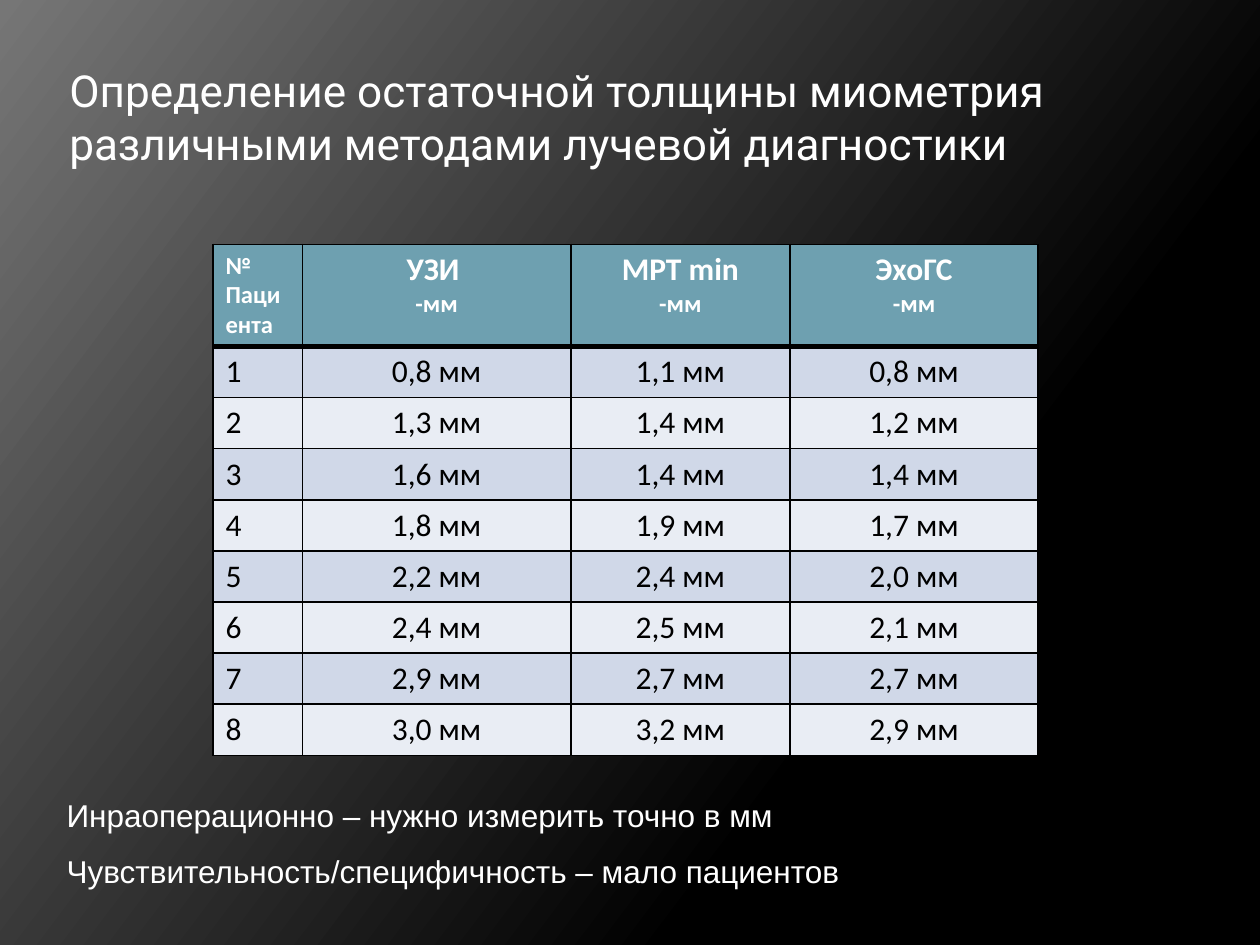
from copy import deepcopy
from dataclasses import dataclass

from lxml.etree import SubElement
from pptx import Presentation
from pptx.dml.color import RGBColor
from pptx.enum.text import MSO_ANCHOR, MSO_AUTO_SIZE, PP_ALIGN
from pptx.oxml.ns import qn
from pptx.util import Inches, Pt


@dataclass(frozen=True)
class Theme:
    white: str = "FFFFFF"
    black: str = "000000"
    glow: str = "767676"
    header: str = "6EA0B0"
    bands: tuple = ("D0D8E8", "E9EDF4")
    title_font: str = "Roboto"
    table_font: str = "Calibri"
    note_font: str = "Arial"
    title_size: float = 25.2
    body_size: float = 18
    unit_size: float = 14


THEME = Theme()

TITLE = "Определение остаточной толщины миометрия различными методами лучевой диагностики"
METHODS = ["УЗИ ", "МРТ min", "ЭхоГС"]
THICKNESS = [
    ("0,8", "1,1", "0,8"),
    ("1,3", "1,4", "1,2"),
    ("1,6", "1,4", "1,4"),
    ("1,8", "1,9", "1,7"),
    ("2,2", "2,4", "2,0"),
    ("2,4", "2,5", "2,1"),
    ("2,9", "2,7", "2,7"),
    ("3,0", "3,2", "2,9"),
]
NOTES = [
    "Инраоперационно – нужно измерить точно в мм",
    "Чувствительность/специфичность – мало пациентов",
]


def write(frame, lines, font, color, size=THEME.body_size, bold=False,
          align=PP_ALIGN.LEFT, before=0):
    """Fill a text frame; a line is a text or a (text, size) pair."""
    for index, line in enumerate(lines):
        text, line_size = line if isinstance(line, tuple) else (line, size)
        paragraph = frame.add_paragraph() if index else frame.paragraphs[0]
        paragraph.alignment = align
        paragraph.space_before = Pt(before)
        run = paragraph.add_run()
        run.text = text
        run.font.name = font
        run.font.size = Pt(line_size)
        run.font.bold = bold
        run.font.color.rgb = RGBColor.from_string(color)


def place(shape, box):
    shape.left, shape.top, shape.width, shape.height = box


def paint_background(slide):
    fill = slide.background.fill
    fill.gradient()
    fill.gradient_angle = 360 - 217
    first, last = fill.gradient_stops
    first.color.rgb = RGBColor.from_string(THEME.black)
    last.color.rgb = RGBColor.from_string(THEME.glow)
    first.position, last.position = 0, 1
    # Keep the gradient black up to 30 %
    stops = slide.element.find(".//" + qn("a:gsLst"))
    black_end = deepcopy(stops[0])
    black_end.set("pos", "30000")
    stops.insert(1, black_end)


def add_title(slide, box):
    title = slide.shapes.title
    place(title, box)
    frame = title.text_frame
    frame.word_wrap = True
    frame.auto_size = MSO_AUTO_SIZE.NONE
    frame.vertical_anchor = MSO_ANCHOR.MIDDLE
    frame.margin_left = frame.margin_right = Inches(0.05)
    frame.margin_top = frame.margin_bottom = Inches(0.05)
    write(frame, [TITLE], THEME.title_font, THEME.white, size=THEME.title_size)


def style_cell(cell, color, top=1, bottom=1):
    """Set black borders, then the fill that must follow them in the XML."""
    properties = cell._tc.get_or_add_tcPr()
    for side, width in (("L", 1), ("R", 1), ("T", top), ("B", bottom)):
        line = SubElement(properties, qn(f"a:ln{side}"), w=str(Pt(width)))
        solid = SubElement(line, qn("a:solidFill"))
        SubElement(solid, qn("a:srgbClr"), val=THEME.black)
    cell.fill.solid()
    cell.fill.fore_color.rgb = RGBColor.from_string(color)


def add_thickness_table(slide, box):
    widths = [0.71, 2.13, 1.74, 1.97]
    table = slide.shapes.add_table(len(THICKNESS) + 1, len(widths), *box).table
    for column, width in zip(table.columns, widths):
        column.width = Inches(width)
    # The header is twice as tall as a patient row
    row_height = int(box[3] / (len(THICKNESS) + 2))
    for index, row in enumerate(table.rows):
        row.height = row_height if index else 2 * row_height

    # Header
    headings = [[("№ Пациента", THEME.unit_size)]]
    headings += [[method, ("-мм", THEME.unit_size)] for method in METHODS]
    for column, heading in enumerate(headings):
        cell = table.cell(0, column)
        style_cell(cell, THEME.header, bottom=3)
        write(cell.text_frame, heading, THEME.table_font, THEME.white, bold=True,
              align=PP_ALIGN.CENTER if column else PP_ALIGN.LEFT)

    # Patients
    for patient, values in enumerate(THICKNESS, start=1):
        texts = [str(patient)] + [f"{value} мм" for value in values]
        for column, text in enumerate(texts):
            cell = table.cell(patient, column)
            style_cell(cell, THEME.bands[(patient - 1) % 2], top=3 if patient == 1 else 1)
            write(cell.text_frame, [text], THEME.table_font, THEME.black,
                  align=PP_ALIGN.CENTER if column else PP_ALIGN.LEFT)


def add_notes_text(slide, box):
    frame = slide.shapes.add_textbox(*box).text_frame
    frame.word_wrap = True
    frame.auto_size = MSO_AUTO_SIZE.SHAPE_TO_FIT_TEXT
    write(frame, NOTES, THEME.note_font, THEME.white, before=10)


def main():
    deck = Presentation()
    deck.slide_width, deck.slide_height = Inches(10), Inches(7.5)
    slide = deck.slides.add_slide(deck.slide_layouts[5])
    paint_background(slide)
    add_title(slide, (Inches(0.5), Inches(0.3), Inches(8.17), Inches(1.25)))
    add_thickness_table(slide, (Inches(1.69), Inches(1.94), Inches(6.55), Inches(4.05)))
    add_notes_text(slide, (Inches(0.43), Inches(6.27), Inches(8.82), Inches(0.85)))
    deck.save("out.pptx")


if __name__ == "__main__":
    main()
